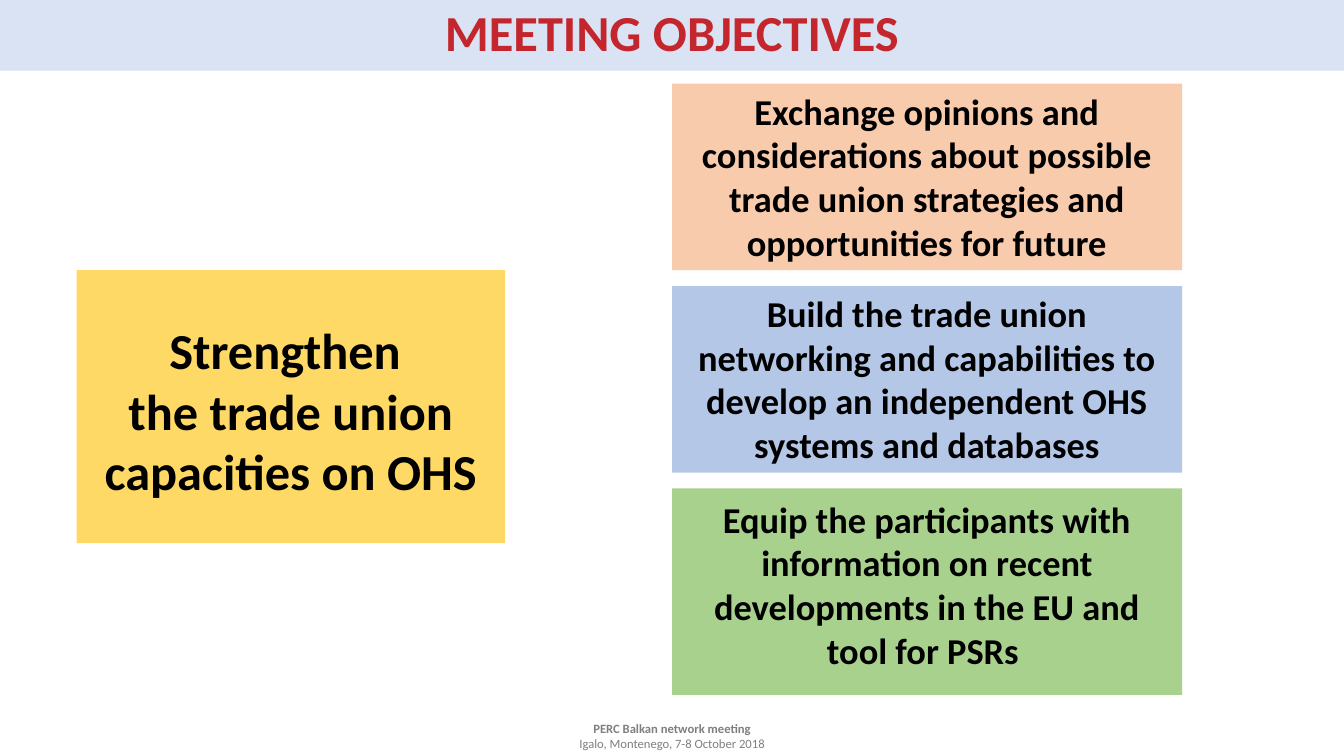
from dataclasses import dataclass
from pptx import Presentation
from pptx.dml.color import RGBColor
from pptx.enum.shapes import MSO_SHAPE
from pptx.enum.text import MSO_ANCHOR, MSO_AUTO_SIZE, PP_ALIGN
from pptx.util import Cm, Pt


@dataclass(frozen=True)
class Theme:
    font: str = "Calibri"
    band: str = "DAE3F3"
    red: str = "C4262E"
    black: str = "000000"
    grey: str = "7F7F7F"
    yellow: str = "FFD966"
    peach: str = "F8CBAD"
    blue: str = "B4C7E7"
    green: str = "A9D18E"
    large: int = 36
    body: int = 26
    small: int = 9


THEME = Theme()
WIDTH, HEIGHT = 33.87, 19.05
GOAL = ["Strengthen ", "the trade union capacities on OHS"]
# Text, fill, height and top inset of each aim
AIMS = [
    ("Exchange opinions and considerations about possible trade union "
     "strategies and opportunities for future", THEME.peach, 4.7, 0.13),
    ("Build the trade union networking and capabilities to develop an "
     "independent OHS systems and databases", THEME.blue, 4.7, 0.13),
    ("Equip the participants with information on recent developments in "
     "the EU and tool for PSRs ", THEME.green, 5.2, 0.21),
]


def write(frame, lines, size, color=THEME.black, bold=True, inset=0.13,
          anchor=MSO_ANCHOR.TOP, spacing=1.0):
    """Fill a frame with centred lines; bold is one flag or one per line."""
    frame.word_wrap = True
    frame.auto_size = MSO_AUTO_SIZE.NONE
    frame.vertical_anchor = anchor
    frame.margin_left = frame.margin_right = Cm(0.25)
    frame.margin_top, frame.margin_bottom = Cm(inset), Cm(0.13)
    flags = [bold] * len(lines) if isinstance(bold, bool) else bold
    for index, (line, flag) in enumerate(zip(lines, flags)):
        para = frame.paragraphs[0] if index == 0 else frame.add_paragraph()
        para.alignment = PP_ALIGN.CENTER
        para.line_spacing = spacing
        run = para.add_run()
        run.text = line
        run.font.name = THEME.font
        run.font.size = Pt(size)
        run.font.bold = flag
        run.font.color.rgb = RGBColor.from_string(color)


def paint(shape, color):
    shape.fill.solid()
    shape.fill.fore_color.rgb = RGBColor.from_string(color)
    shape.line.fill.background()


def add_title(slide, text):
    title = slide.shapes.title
    title.left, title.top = Cm(0), Cm(0)
    title.width, title.height = Cm(WIDTH), Cm(1.78)
    paint(title, THEME.band)
    write(title.text_frame, [text], THEME.large, color=THEME.red,
          anchor=MSO_ANCHOR.MIDDLE, spacing=0.9)


def add_box(slide, lines, place, fill, size, inset):
    box = slide.shapes.add_shape(MSO_SHAPE.RECTANGLE, *map(Cm, place))
    box.shadow.inherit = False
    paint(box, fill)
    write(box.text_frame, lines, size, inset=inset)


def add_aims(slide, top=2.11, gap=0.4):
    for text, fill, height, inset in AIMS:
        add_box(slide, [text], (16.94, top, 12.85, height), fill,
                THEME.body, inset)
        top += height + gap


def add_footer(slide, lines):
    width = 6.12
    place = ((WIDTH - width) / 2, 18.03, width, 1.02)
    box = slide.shapes.add_textbox(*map(Cm, place))
    write(box.text_frame, lines, THEME.small, color=THEME.grey,
          bold=[True, False])


def main():
    deck = Presentation()
    deck.slide_width, deck.slide_height = Cm(WIDTH), Cm(HEIGHT)
    slide = deck.slides.add_slide(deck.slide_layouts.get_by_name("Title Only"))
    add_title(slide, "MEETING OBJECTIVES")
    add_box(slide, GOAL, (1.93, 6.81, 10.8, 6.88), THEME.yellow,
            THEME.large, 1.24)
    add_aims(slide)
    add_footer(slide, ["PERC Balkan network meeting",
                       "Igalo, Montenego, 7-8 October 2018"])
    deck.save("out.pptx")


if __name__ == "__main__":
    main()
